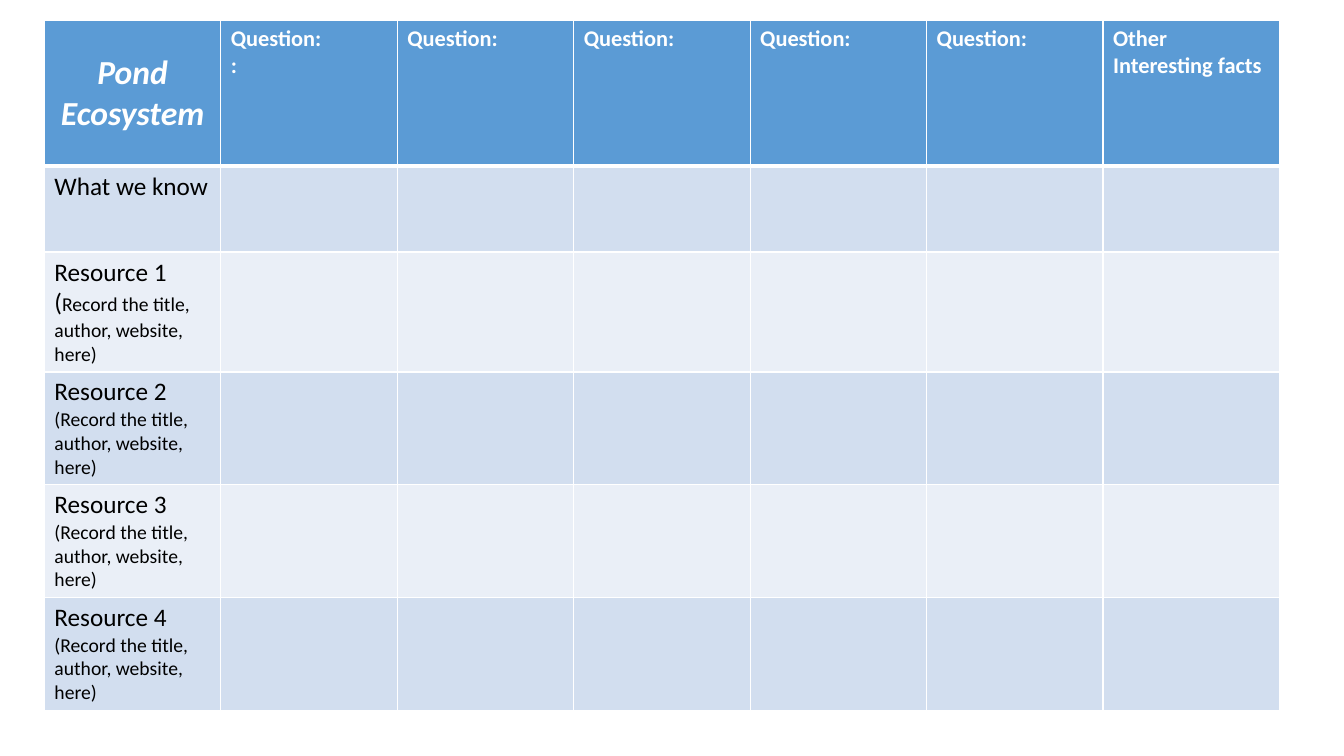
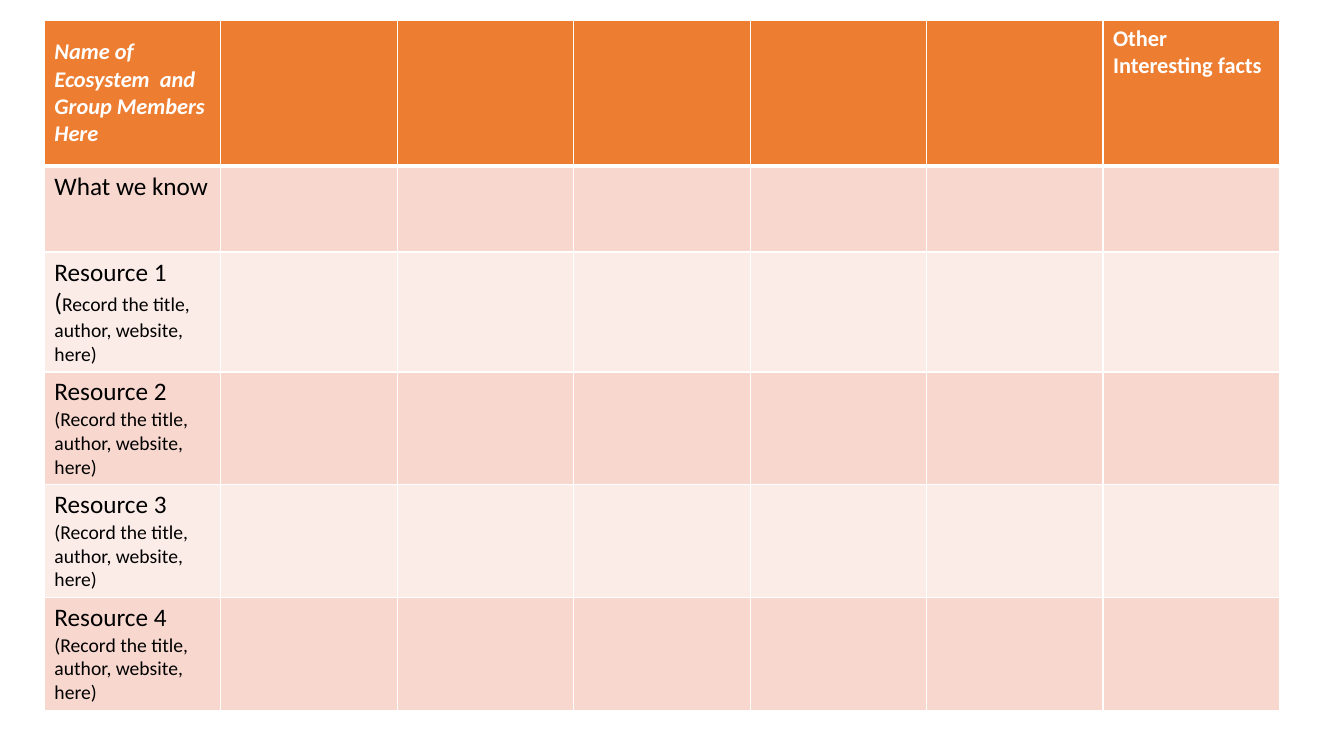
import pptx
import pptx.dml.color
import pptx.enum.text
import pptx.oxml
import pptx.oxml.ns
import pptx.util

Inches = pptx.util.Inches
Pt = pptx.util.Pt

COLORS = {
    "white": "FFFFFF",
    "black": "000000",
    "blue": "5B9BD5",
    "blue band": "D2DEEF",
    "blue pale": "EAEFF7",
    "orange": "ED7D31",
    "orange band": "F8D7CE",
    "orange pale": "FCECE8",
}
FONT = "Calibri"
COLUMN_COUNT = 7
COLUMN_WIDTH = 1.75
ROW_HEIGHTS = [1.45, 0.85, 1.19, 1.12, 1.12, 1.12]
CITATION = "Record the title, author, website, here)"
LAST_HEADING = "Other Interesting facts"


def write_text(para, text, size=18, color="black", bold=False, italic=False):
    span = para.add_run()
    span.text = text
    span.font.name = FONT
    span.font.size = Pt(size)
    span.font.bold = bold
    span.font.italic = italic
    span.font.color.rgb = pptx.dml.color.RGBColor.from_string(COLORS[color])


def format_cell(cell, fill, top=1, bottom=1):
    properties = cell._tc.get_or_add_tcPr()
    for side, width in (("L", 1), ("R", 1), ("T", top), ("B", bottom)):
        properties.append(pptx.oxml.parse_xml(
            f'<a:ln{side} {pptx.oxml.ns.nsdecls("a")} w="{Pt(width)}">'
            f'<a:solidFill><a:srgbClr val="{COLORS["white"]}"/></a:solidFill>'
            f'</a:ln{side}>'
        ))
    cell.fill.solid()
    cell.fill.fore_color.rgb = pptx.dml.color.RGBColor.from_string(COLORS[fill])


charts = [
    {
        "theme": "blue",
        "name": "Pond Ecosystem",
        "name size": 24,
        "name align": pptx.enum.text.PP_ALIGN.CENTER,
        "headings": [["Question:", ":"]] + [["Question:"]] * 4 + [[LAST_HEADING]],
    },
    {
        "theme": "orange",
        "name": "Name of Ecosystem  and Group Members Here",
        "name size": 16,
        "name align": pptx.enum.text.PP_ALIGN.LEFT,
        "headings": [[]] * 5 + [[LAST_HEADING]],
    },
]

deck = pptx.Presentation()
deck.slide_width = Inches(13.33)
deck.slide_height = Inches(7.5)
blank_layout = deck.slide_layouts[6]

for chart in charts:
    page = deck.slides.add_slide(blank_layout)
    table = page.shapes.add_table(
        len(ROW_HEIGHTS), COLUMN_COUNT, Inches(0.44), Inches(0.2),
        Inches(COLUMN_COUNT * COLUMN_WIDTH), Inches(sum(ROW_HEIGHTS)),
    ).table
    table.horz_banding = False
    for column in table.columns:
        column.width = Inches(COLUMN_WIDTH)

    for row_index, height in enumerate(ROW_HEIGHTS):
        table.rows[row_index].height = Inches(height)
        shade = " band" if row_index % 2 else " pale"
        fill = chart["theme"] + (shade if row_index else "")
        for cell in table.rows[row_index].cells:
            format_cell(cell, fill, top=3 if row_index == 1 else 1,
                        bottom=3 if row_index == 0 else 1)

    name_cell = table.cell(0, 0)
    name_cell.vertical_anchor = pptx.enum.text.MSO_ANCHOR.MIDDLE
    name_para = name_cell.text_frame.paragraphs[0]
    name_para.alignment = chart["name align"]
    write_text(name_para, chart["name"], size=chart["name size"],
               color="white", bold=True, italic=True)

    for column_index, lines in enumerate(chart["headings"], start=1):
        frame = table.cell(0, column_index).text_frame
        for line_index, line in enumerate(lines):
            para = frame.add_paragraph() if line_index else frame.paragraphs[0]
            write_text(para, line, size=16, color="white", bold=True)

    write_text(table.cell(1, 0).text_frame.paragraphs[0], "What we know")

    for number in range(1, 5):
        frame = table.cell(number + 1, 0).text_frame
        write_text(frame.paragraphs[0], f"Resource {number}")
        para = frame.add_paragraph()
        if number == 1:
            write_text(para, "(")
            write_text(para, CITATION, size=14)
        else:
            write_text(para, "(" + CITATION, size=14)

deck.save("out.pptx")
